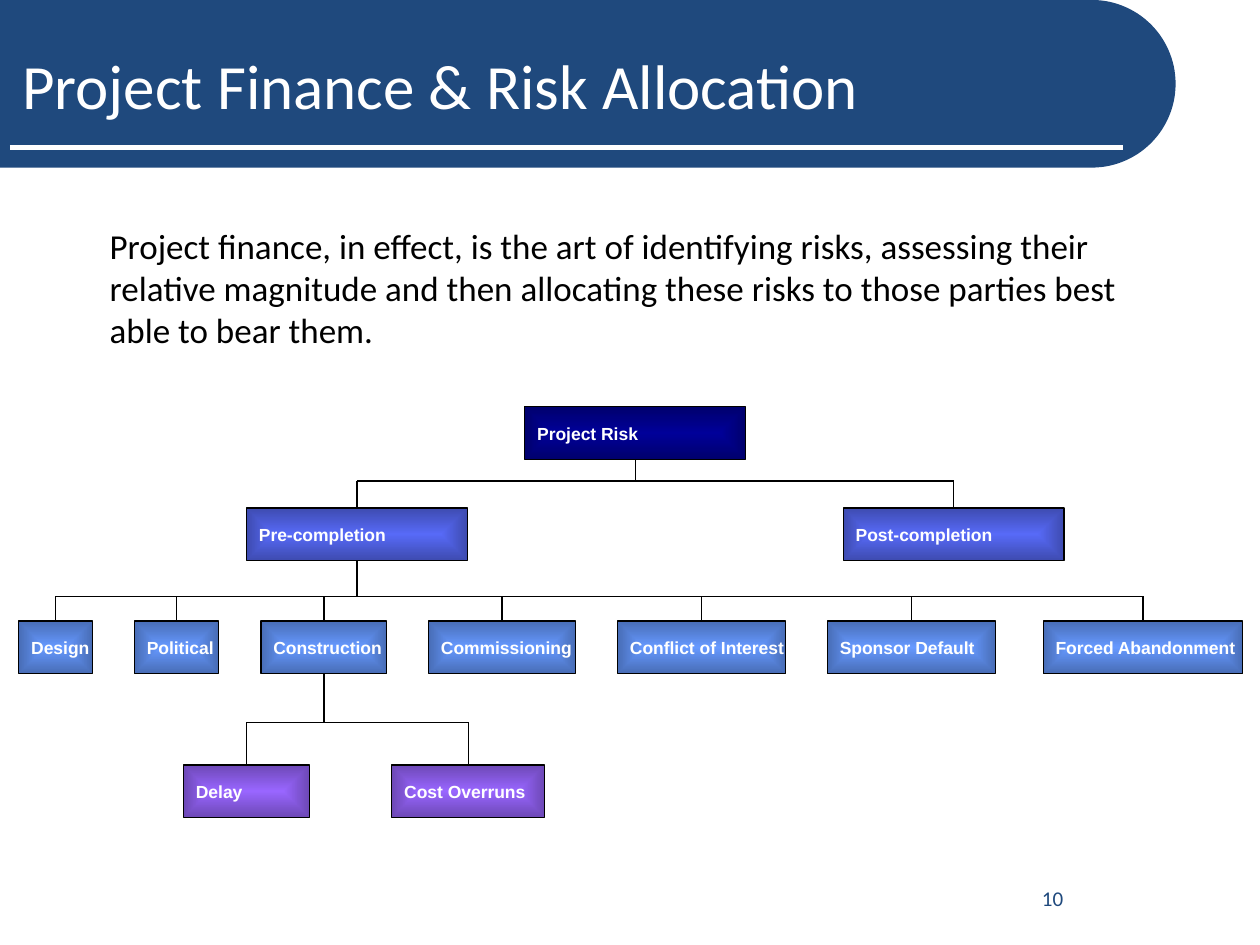
import math

from lxml import etree
from pptx import Presentation
from pptx.dml.color import RGBColor
from pptx.enum.shapes import MSO_CONNECTOR, MSO_SHAPE
from pptx.enum.text import MSO_ANCHOR, PP_ALIGN
from pptx.oxml.ns import qn
from pptx.util import Cm, Pt

STRAIGHT = MSO_CONNECTOR.STRAIGHT
RECTANGLE = MSO_SHAPE.RECTANGLE
MIDDLE, TOP = MSO_ANCHOR.MIDDLE, MSO_ANCHOR.TOP
LEFT, CENTER = PP_ALIGN.LEFT, PP_ALIGN.CENTER
TOP_SIDE, BOTTOM_SIDE = 0, 2
BLANK_LAYOUT = 6

COLORS = {
    "header": "1F497D",
    "white": "FFFFFF",
    "black": "000000",
    "root": "000099",
    "phase": "576AF7",
    "risk": "6699FF",
    "detail": "9966FF",
}
TITLE_FORMAT = {"name": "Calibri", "size": Pt(36)}
BODY_FORMAT = {"name": "Calibri", "size": Pt(20)}
NUMBER_FORMAT = {"name": "Calibri", "size": Pt(12)}
BOX_FORMAT = {"name": "Arial", "size": Pt(10), "bold": True}

BOX_HEIGHT = 1.06
EDGE_SHADE = "46275"
RISKS = [
    ("Design", 0.38, 1.48),
    ("Political", 2.71, 1.69),
    ("Construction", 5.26, 2.54),
    ("Commissioning", 8.64, 2.96),
    ("Conflict of Interest", 12.45, 3.39),
    ("Sponsor Default", 16.68, 3.39),
    ("Forced Abandonment", 21.03, 4.02),
]


def color(name):
    return RGBColor.from_string(COLORS[name])


def write_text(shape, text, color_name, font_format, frame_format, alignment=LEFT):
    for name, value in frame_format.items():
        setattr(shape.text_frame, name, value)
    paragraph = shape.text_frame.paragraphs[0]
    paragraph.alignment = alignment
    run = paragraph.add_run()
    run.text = text
    for name, value in font_format.items():
        setattr(run.font, name, value)
    run.font.color.rgb = color(color_name)


def add_text(slide, text, place, color_name, font_format, anchor, alignment=LEFT):
    box = slide.shapes.add_textbox(*map(Cm, place))
    frame_format = {"word_wrap": True, "vertical_anchor": anchor}
    write_text(box, text, color_name, font_format, frame_format, alignment)


def add_header(slide, width, height):
    radius = height / 2
    builder = slide.shapes.build_freeform(0, 0, scale=1.0)
    arc = []
    for degrees in range(-90, 91, 3):
        angle = math.radians(degrees)
        x = width - radius + radius * math.cos(angle)
        y = radius + radius * math.sin(angle)
        arc.append((Cm(x), Cm(y)))
    builder.add_line_segments(arc + [(0, Cm(height))], close=True)
    header = builder.convert_to_shape()
    header.shadow.inherit = False
    header.fill.solid()
    header.fill.fore_color.rgb = color("header")
    header.line.fill.background()


def fill_from_center(shape, color_name):
    shape.fill.gradient()
    for stop in shape.fill.gradient_stops:
        stop.color.rgb = color(color_name)
    gradient = shape._element.spPr.find(qn("a:gradFill"))
    edge_color = gradient.findall(".//" + qn("a:srgbClr"))[-1]
    etree.SubElement(edge_color, qn("a:shade"), val=EDGE_SHADE)
    gradient.remove(gradient.find(qn("a:lin")))
    gradient_path = etree.SubElement(gradient, qn("a:path"), path="shape")
    center = dict.fromkeys("ltrb", "50000")
    etree.SubElement(gradient_path, qn("a:fillToRect"), center)


def add_box(slide, text, left, top, width, color_name):
    box = slide.shapes.add_shape(RECTANGLE, *map(Cm, (left, top, width, BOX_HEIGHT)))
    box.shadow.inherit = False
    fill_from_center(box, color_name)
    box.line.color.rgb = color("black")
    box.line.width = Pt(0.75)
    frame_format = {"word_wrap": False, "vertical_anchor": MIDDLE}
    write_text(box, text, "white", BOX_FORMAT, frame_format)
    return box


def add_line(slide, start, end, color_name="black", width=0.75):
    line = slide.shapes.add_connector(STRAIGHT, *start, *end)
    line.line.color.rgb = color(color_name)
    line.line.width = Pt(width)
    etree.SubElement(line._element.spPr, qn("a:effectLst"))
    return line


def center_x(shape):
    return shape.left + shape.width // 2


def add_branch(slide, parent, children, bus_top):
    bus_y = Cm(bus_top)
    x = center_x(parent)
    stem = add_line(slide, (x, parent.top + parent.height), (x, bus_y))
    stem.begin_connect(parent, BOTTOM_SIDE)
    add_line(slide, (center_x(children[0]), bus_y), (center_x(children[-1]), bus_y))
    for child in children:
        x = center_x(child)
        drop = add_line(slide, (x, bus_y), (x, child.top))
        drop.end_connect(child, TOP_SIDE)


def main():
    presentation = Presentation()
    presentation.slide_width = Cm(25.4)
    presentation.slide_height = Cm(19.05)
    slide = presentation.slides.add_slide(presentation.slide_layouts[BLANK_LAYOUT])

    add_header(slide, 23.7, 3.38)
    add_line(slide, (Cm(0.2), Cm(2.97)), (Cm(22.63), Cm(2.97)), "white", 3)
    add_text(slide, "Project Finance & Risk Allocation", (0.2, 0.43, 22.28, 2.54),
             "white", TITLE_FORMAT, MIDDLE)
    add_text(slide, "Project finance, in effect, is the art of identifying risks, "
             "assessing their relative magnitude and then allocating these risks "
             "to those parties best able to bear them.",
             (1.96, 4.4, 21.05, 2.9), "black", BODY_FORMAT, TOP)
    add_text(slide, "10", (18.26, 17.48, 5.92, 1.27), "header",
             NUMBER_FORMAT, MIDDLE, CENTER)

    root = add_box(slide, "Project Risk", 10.58, 8.2, 4.45, "root")
    phases = [add_box(slide, text, left, 10.24, 4.45, "phase")
              for text, left in (("Pre-completion", 4.97), ("Post-completion", 17))]
    risks = {text: add_box(slide, text, left, 12.52, width, "risk")
             for text, left, width in RISKS}
    details = [add_box(slide, text, left, 15.42, width, "detail")
               for text, left, width in (("Delay", 3.7, 2.54), ("Cost Overruns", 7.9, 3.08))]

    add_branch(slide, root, phases, 9.7)
    add_branch(slide, phases[0], list(risks.values()), 12.02)
    add_branch(slide, risks["Construction"], details, 14.56)

    presentation.save("out.pptx")


if __name__ == "__main__":
    main()
